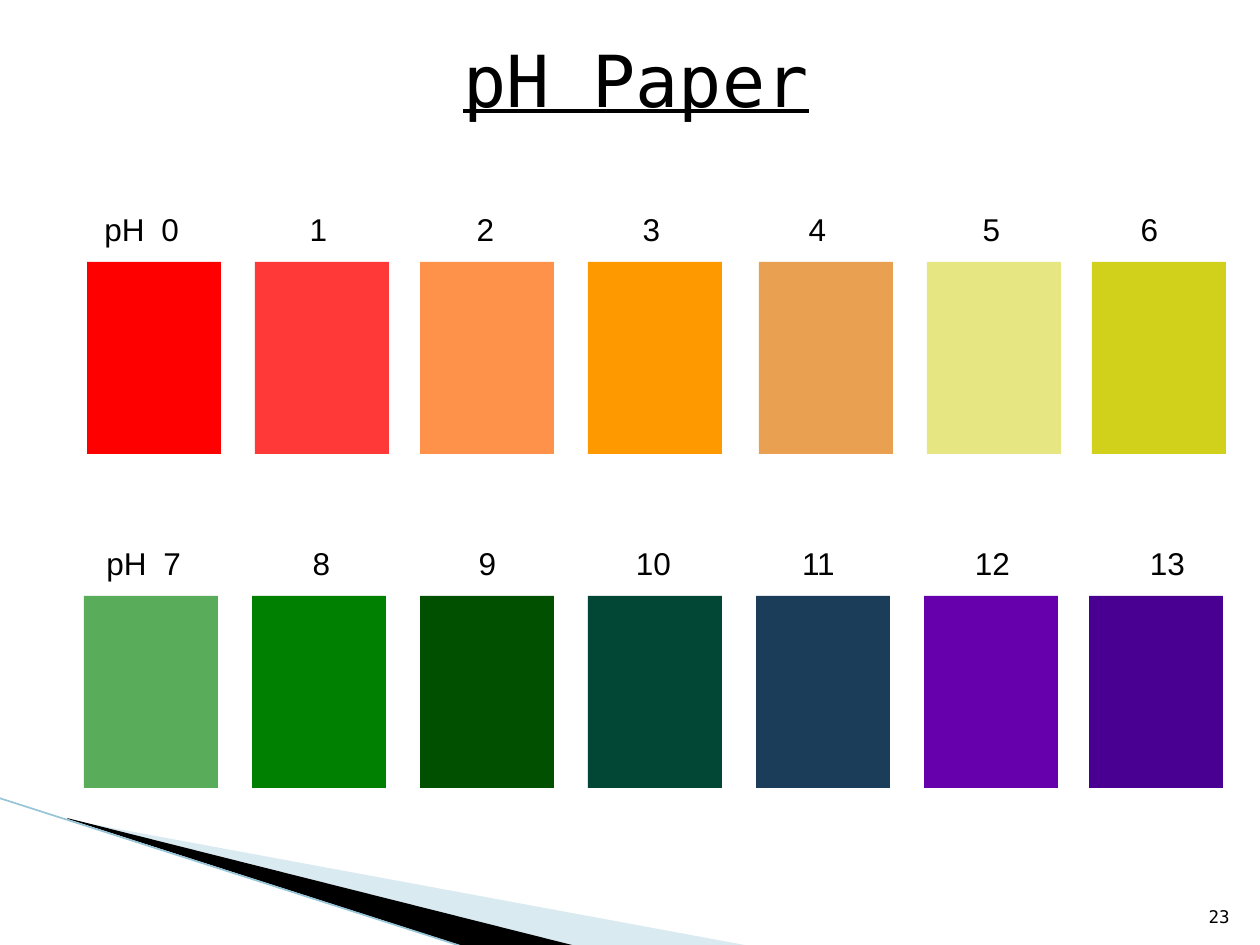
from lxml.etree import SubElement
from pptx import Presentation
from pptx.dml.color import RGBColor
from pptx.enum.shapes import MSO_CONNECTOR as Link, MSO_SHAPE as Shape
from pptx.enum.text import MSO_ANCHOR as Anchor, PP_ALIGN as Align
from pptx.oxml.ns import qn
from pptx.util import Pt

SCALE = 914400 / 126  # EMU in one px
MONO, SANS = "DejaVu Sans Mono", "Arial"

BLACK = RGBColor(0x00, 0x00, 0x00)
PALE = RGBColor(0xA0, 0xCB, 0xDC)
EDGE = RGBColor(0x97, 0xC5, 0xD8)
RED = RGBColor(0xFF, 0x00, 0x00)
CORAL = RGBColor(0xFF, 0x66, 0x00)
ORANGE = RGBColor(0xFF, 0x99, 0x00)
TAN = RGBColor(0xE9, 0xA1, 0x51)
OLIVE = RGBColor(0xCC, 0xCC, 0x00)
GREEN = RGBColor(0x00, 0x80, 0x00)
FOREST = RGBColor(0x00, 0x50, 0x00)
TEAL = RGBColor(0x02, 0x46, 0x36)
NAVY = RGBColor(0x04, 0x29, 0x48)
PURPLE = RGBColor(0x66, 0x00, 0xAC)
INDIGO = RGBColor(0x49, 0x00, 0x92)

# Swatch grid, with a small shift in px for each swatch
LEFT, STEP, WIDE, HIGH = 84, 168, 134, 192

# Each swatch: colour, opacity in percent, shift
ACIDS = [(RED, 100, 3), (RED, 78, 3), (CORAL, 71, 0), (ORANGE, 100, 0),
         (TAN, 100, 3), (OLIVE, 49, 3), (OLIVE, 89, 0)]
BASES = [(GREEN, 65, 0), (GREEN, 100, 0), (FOREST, 100, 0), (TEAL, 100, 0),
         (NAVY, 90, 0), (PURPLE, 100, 0), (INDIGO, 100, -3)]

# Centres of the labels after the first, from the start of the text
ACID_TABS = [214, 381, 547, 713, 887, 1045]
BASE_TABS = [215, 381, 547, 712, 886, 1061]
FIRST_TAB = 57


def px(num):
    return round(num * SCALE)


def box(*nums):
    return [px(num) for num in nums]


def paint(shape, color, alpha=100):
    shape.shadow.inherit = False
    shape.line.fill.background()
    shape.fill.solid()
    shape.fill.fore_color.rgb = color
    if alpha < 100:
        tint = shape.fill._xPr.find(qn("a:solidFill"))[0]
        SubElement(tint, qn("a:alpha"), val=str(alpha * 1000))


def add_run(para, text, size, face):
    run = para.add_run()
    run.text = text
    run.font.size = Pt(size)
    run.font.name = face
    run.font.color.rgb = BLACK
    return run


def add_wedge(slide, points, color, alpha=100):
    pen = slide.shapes.build_freeform(*points[0], scale=SCALE)
    pen.add_line_segments(points[1:], close=True)
    paint(pen.convert_to_shape(), color, alpha)


def add_edge(slide, ends):
    line = slide.shapes.add_connector(Link.STRAIGHT, *box(*ends))
    line.line.color.rgb = EDGE
    line.line.width = Pt(0.95)
    SubElement(line._element.spPr, qn("a:effectLst"))


def add_title(slide, text):
    title = slide.shapes.title
    title.left, title.top, title.width, title.height = box(116, 0, 1040, 158)
    frame = title.text_frame
    frame.vertical_anchor = Anchor.MIDDLE
    para = frame.paragraphs[0]
    para.alignment = Align.CENTER
    add_run(para, text, 41, MONO).font.underline = True


def add_text(slide, place):
    frame = slide.shapes.add_textbox(*box(*place)).text_frame
    frame.word_wrap = True
    return frame


def add_labels(slide, place, first, tabs):
    para = add_text(slide, place).paragraphs[0]
    stops = SubElement(para._p.get_or_add_pPr(), qn("a:tabLst"))
    for pos, kind in [(FIRST_TAB, "l")] + [(tab, "ctr") for tab in tabs]:
        SubElement(stops, qn("a:tab"), pos=str(px(pos)), algn=kind)
    nums = [str(first + i) for i in range(len(tabs) + 1)]
    add_run(para, "\t".join(["pH"] + nums), 18, SANS)


def add_row(slide, top, row):
    for i, (color, alpha, shift) in enumerate(row):
        place = box(LEFT + i * STEP + shift, top, WIDE, HIGH)
        paint(slide.shapes.add_shape(Shape.RECTANGLE, *place), color, alpha)


def add_number(slide, text):
    frame = add_text(slide, (1192, 883, 50, 50))
    frame.vertical_anchor = Anchor.BOTTOM
    para = frame.paragraphs[0]
    para.alignment = Align.RIGHT
    add_run(para, text, 10, MONO)


def main():
    deck = Presentation()
    deck.slide_width, deck.slide_height = box(1260, 945)
    slide = deck.slides.add_slide(deck.slide_layouts[5])

    # Corner decoration
    add_wedge(slide, [(69, 820), (750, 946), (575, 946), (69, 819)], PALE, 40)
    add_wedge(slide, [(67, 818), (576, 946), (469, 948), (68, 819)], BLACK)
    add_edge(slide, (-1, 798, 467, 948))

    # Title and page number
    add_number(slide, "23")
    add_title(slide, "pH Paper")

    # Colour scale
    add_row(slide, 262, ACIDS)
    add_row(slide, 596, BASES)
    add_labels(slide, (92, 204, 1081, 50), 0, ACID_TABS)
    add_labels(slide, (94, 538, 1106, 50), 7, BASE_TABS)

    deck.save("out.pptx")


if __name__ == "__main__":
    main()
